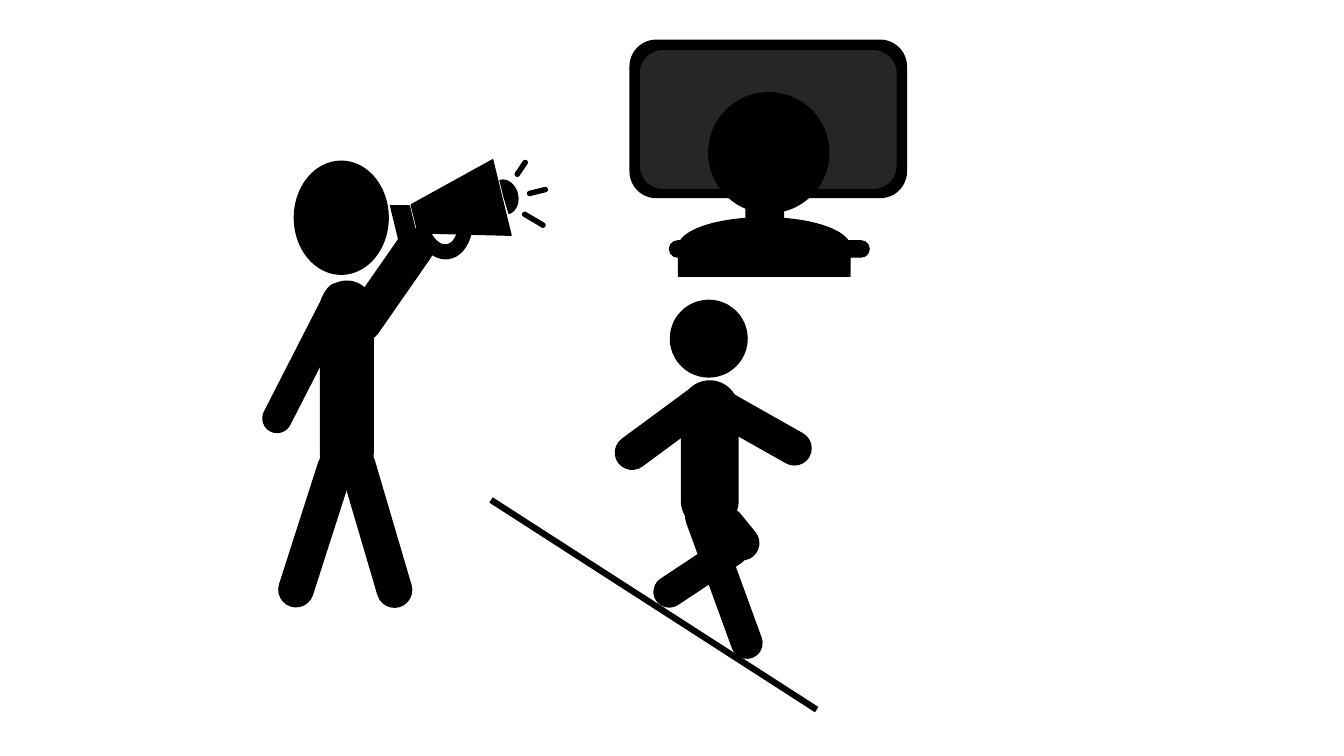
from pptx import Presentation, util as u
from pptx.dml.color import RGBColor
from pptx.enum import shapes
from pptx.oxml.ns import qn
from lxml import etree

BLACK = RGBColor(0x00, 0x00, 0x00)
GRAY = RGBColor(0x26, 0x26, 0x26)
CELL = u.Inches(0.1)  # one column or row of the slide grid

Kind = shapes.MSO_SHAPE
ROUND, OVAL = Kind.ROUNDED_RECTANGLE, Kind.OVAL
PILL = [0.5]  # fully rounded ends

deck = Presentation()
deck.slide_width, deck.slide_height = u.Inches(13.33), u.Inches(7.5)
slide = deck.slides.add_slide(deck.slide_layouts[6])


def grid(*cells):
    return [round(c * CELL) for c in cells]


def draw(group, kind, box, turn=0, adjust=(), fill=BLACK):
    part = group.shapes.add_shape(kind, *grid(*box))
    part.rotation = turn
    for i, value in enumerate(adjust):
        part.adjustments[i] = value
    part.shadow.inherit = False
    part.fill.solid()
    part.fill.fore_color.rgb = fill
    part.line.color.rgb = BLACK
    part.line.width = u.Pt(1)


# Speaker: body, raised arm, legs, lowered arm
speaker = slide.shapes.add_group_shape()
for box, turn in [
    ((31.8, 27.9, 5.2, 19.7), 0),
    ((36.8, 21.9, 3.6, 12.7), 214.8),
    ((29.6, 44.4, 3.4, 16.1), 17.8),
    ((35.6, 44.2, 3.4, 16.3), 163.6),
    ((22.4, 34.1, 16.3, 2.8), 117.1),
]:
    draw(speaker, ROUND, box, turn, PILL)
draw(speaker, OVAL, (29.2, 16, 9.3, 11.2))

# Megaphone: horn, mouthpiece, handle, bell, sound marks
draw(speaker, Kind.TRAPEZOID, (41.6, 16.2, 7.7, 8.9), 256.3, [0.314])
draw(speaker, Kind.TRAPEZOID, (38.2, 21.1, 3.7, 1.8), 76.3)
draw(speaker, Kind.BLOCK_ARC, (40.8, 16.9, 6, 8.8), 170.3, [119.18, 198.61, 0.225])
draw(speaker, Kind.PIE, (48.3, 18.2, 3.4, 2.7), 256.3, [0, 106.2])
for left, top, width, turn in [
    (51.7, 21.6, 2.5, 210.5),
    (50.8, 16.5, 1.8, 123.9),
    (52.3, 18.8, 2, 166.3),
]:
    draw(speaker, ROUND, (left, top, width, 0.4), turn, PILL)

# Viewer: neck, screen, armrests, head, shoulders
viewer = slide.shapes.add_group_shape()
draw(viewer, ROUND, (74, 18.7, 3.7, 5.4))
draw(viewer, ROUND, (62.5, 4, 27.4, 15.6))
draw(viewer, ROUND, (63.4, 4.9, 25.6, 13.9), fill=GRAY)
draw(viewer, ROUND, (66.4, 23.9, 19.8, 1.6), adjust=PILL)
draw(viewer, OVAL, (70.3, 9.2, 11.9, 11.9))
draw(viewer, Kind.FLOWCHART_DELAY, (72.9, 16, 5.8, 17), 270)

# Walker: slope and head
walker = slide.shapes.add_group_shape()
slope = walker.shapes.add_connector(
    shapes.MSO_CONNECTOR.STRAIGHT, *grid(48.7, 49.6, 81, 70.4))
slope.line.color.rgb = BLACK
slope.line.width = u.Pt(4.5)
etree.SubElement(slope.element.spPr, qn("a:effectLst"))
draw(walker, OVAL, (66.5, 29.8, 7.6, 7.6))

# Walker: body, arms, straight leg, bent shin and thigh
for box, turn in [
    ((67.6, 37.8, 5.6, 14.7), 0),
    ((64.3, 36.8, 3.3, 11.4), 53.6),
    ((73.4, 36.4, 3.3, 11.9), 299.5),
    ((70.3, 49.4, 3, 16.3), 340),
    ((68, 51.4, 3, 10.5), 56.5),
    ((71.2, 50.1, 3.3, 5.7), 320.8),
]:
    draw(walker, ROUND, box, turn, PILL)

deck.save("out.pptx")
